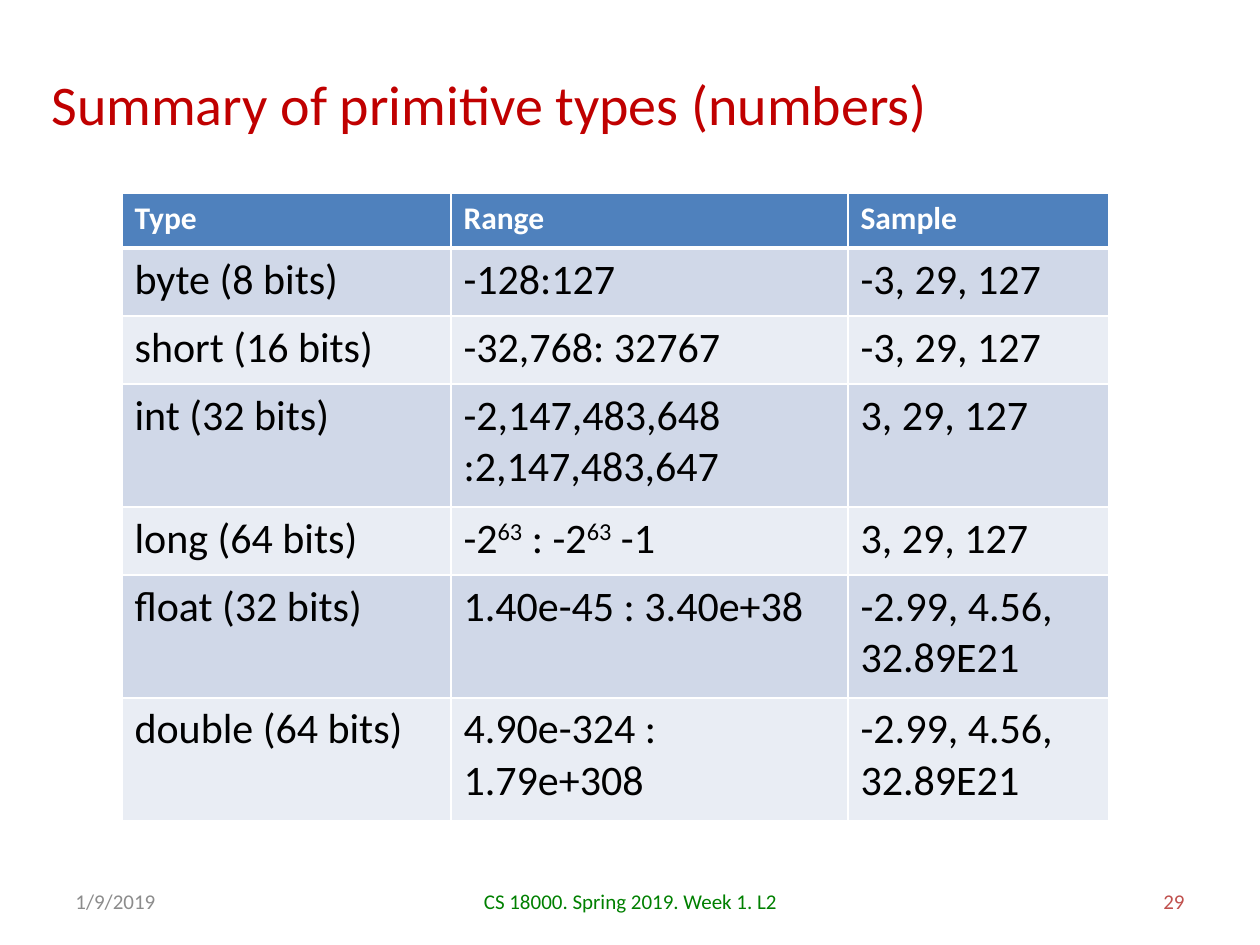
from lxml import etree
from pptx import Presentation, util as u
from pptx.dml.color import RGBColor
from pptx.enum import text as t
from pptx.oxml.ns import qn

# Content: a cell is a list of runs, and "^" marks a superscript
HEAD = ["Type", "Range", "Sample"]
ROWS = [
    ["byte (8 bits)", "-128:127", "-3, 29, 127"],
    ["short (16 bits)", "-32,768: 32767", "-3, 29, 127"],
    ["int (32 bits)", "-2,147,483,648 :2,147,483,647", "3, 29, 127"],
    ["long (64 bits)", ["-2", "^63", " : -2", "^63", " -1"], "3, 29, 127"],
    ["float (32 bits)", "1.40e-45 : 3.40e+38", "-2.99, 4.56, 32.89E21"],
    ["double (64 bits)", "4.90e-324 : 1.79e+308", "-2.99, 4.56, 32.89E21"],
]
HEX = {"title": "C00000", "num": "C0504D", "foot": "008000", "date": "8C8C8C",
       "head": "4F81BD", "odd": "D0D8E8", "even": "E9EDF4",
       "white": "FFFFFF", "black": "000000"}
LEFT, MID, RIGHT = t.PP_ALIGN.LEFT, t.PP_ALIGN.CENTER, t.PP_ALIGN.RIGHT
# words, box in px, size in points, colour, alignment
TEXTS = [
    ("Summary of primitive types (numbers)", (39, 50, 1137, 106), 32, "title", LEFT),
    ("29", (903, 876, 294, 50), 12, "num", RIGHT),
    ("CS 18000. Spring 2019. Week 1. L2", (431, 876, 399, 50), 12, "foot", MID),
    ("1/9/2019", (63, 876, 294, 50), 12, "date", LEFT),
]
COLS = [329, 397, 261]
HEAD_H, ONE, TWO = 55, 68, 123
HIGH = [HEAD_H, ONE, ONE, TWO, ONE, TWO, TWO]
AT = (122, 193)


def px(n):
    return u.Emu(round(n * 914400 / 126))


def rgb(name):
    return RGBColor.from_string(HEX[name])


def add_runs(para, runs, size, color, bold=False):
    for words in [runs] if isinstance(runs, str) else runs:
        run = para.add_run()
        run.text = words.lstrip("^")
        font = run.font
        font.name, font.size, font.bold = "Calibri", u.Pt(size), bold
        font.color.rgb = rgb(color)
        if words.startswith("^"):
            run._r.get_or_add_rPr().set("baseline", "30000")


def add_edge(cell, side, width):
    line = etree.SubElement(cell._tc.get_or_add_tcPr(), qn("a:ln" + side),
                            w=str(u.Pt(width)))
    fill = etree.SubElement(line, qn("a:solidFill"))
    etree.SubElement(fill, qn("a:srgbClr"), val=HEX["white"])


def main():
    deck = Presentation()
    deck.slide_width, deck.slide_height = px(1260), px(945)
    slide = deck.slides.add_slide(deck.slide_layouts[6])

    # Title and footer
    for words, box, size, color, align in TEXTS:
        frame = slide.shapes.add_textbox(*map(px, box)).text_frame
        frame.word_wrap = True
        frame.vertical_anchor = t.MSO_ANCHOR.MIDDLE
        para = frame.paragraphs[0]
        para.alignment = align
        add_runs(para, words, size, color)

    # Table
    data = [HEAD] + ROWS
    box = (*AT, sum(COLS), sum(HIGH))
    grid = slide.shapes.add_table(len(data), len(COLS), *map(px, box)).table
    for col, wide in zip(grid.columns, COLS):
        col.width = px(wide)
    for row, high in zip(grid.rows, HIGH):
        row.height = px(high)
    for i, line in enumerate(data):
        top = i == 0
        band = "head" if top else "odd" if i % 2 else "even"
        for j, runs in enumerate(line):
            cell = grid.cell(i, j)
            for side in "LRTB":
                thick = (top and side == "B") or (i == 1 and side == "T")
                add_edge(cell, side, 3 if thick else 1)
            cell.fill.solid()
            cell.fill.fore_color.rgb = rgb(band)
            add_runs(cell.text_frame.paragraphs[0], runs, 18 if top else 24,
                     "white" if top else "black", top)

    deck.save("out.pptx")


if __name__ == "__main__":
    main()
